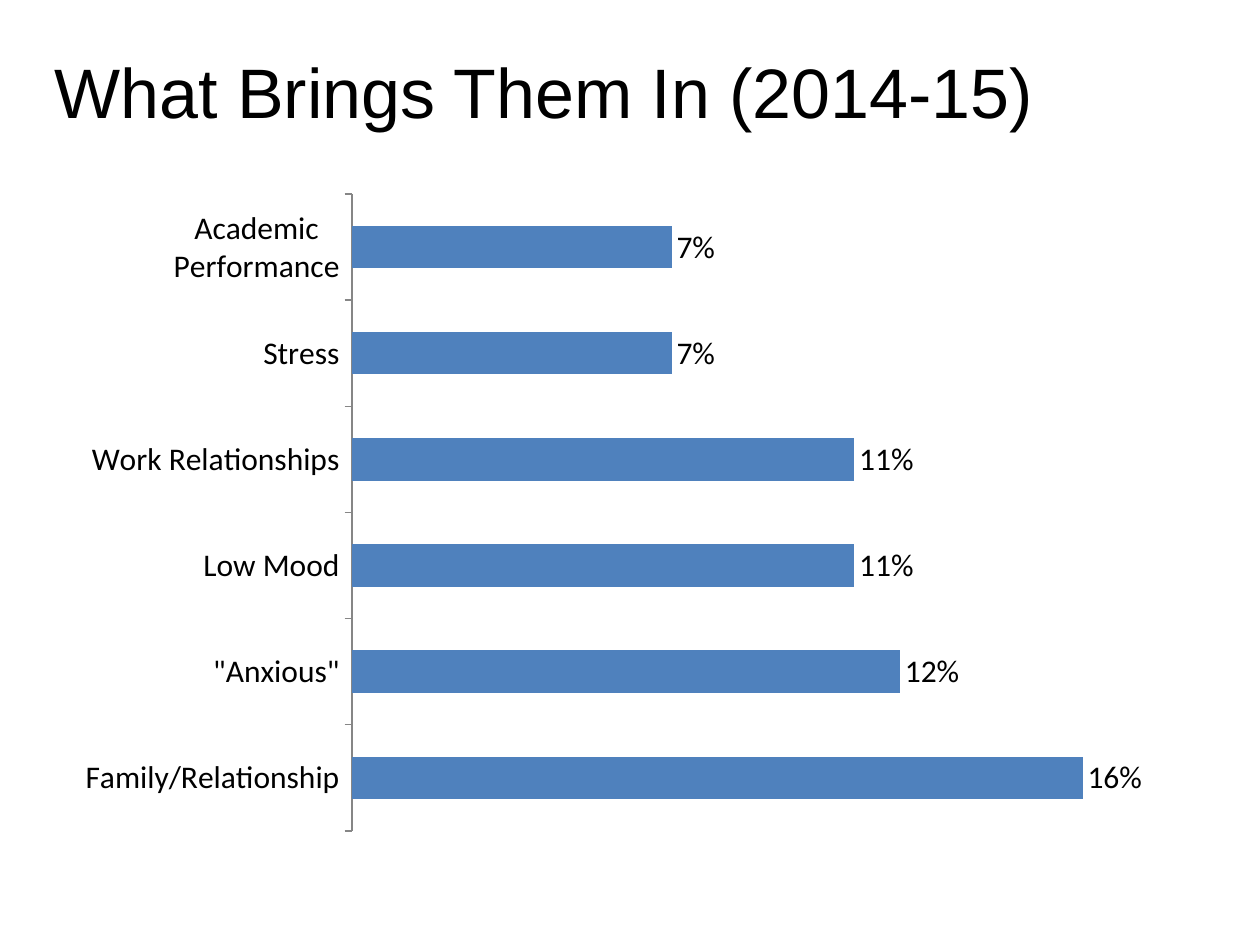
from lxml import etree
from pptx import Presentation
from pptx.chart.data import CategoryChartData
from pptx.dml.color import RGBColor
from pptx.enum.chart import XL_CHART_TYPE, XL_LABEL_POSITION, XL_TICK_LABEL_POSITION, XL_TICK_MARK
from pptx.enum.text import MSO_ANCHOR, PP_ALIGN
from pptx.oxml.ns import qn
from pptx.util import Pt

PX = 914400 // 126
COLORS = {"text": "000000", "bar": "4F81BD", "axis": "868686"}
TITLE = "What Brings Them In (2014-15)"
REASONS = [
    ("Family/Relationship", 0.16),
    ('"Anxious"', 0.12),
    ("Low Mood", 0.11),
    ("Work Relationships", 0.11),
    ("Stress", 0.07),
    ("Academic Performance", 0.07),
]
TITLE_BOX = (42, 35, 1218, 152)
CHART_BOX = (63, 181, 1134, 664)
PLOT_BOX = (352, 194, 822, 637)


def color(name):
    return RGBColor.from_string(COLORS[name])


def emu(box):
    return [length * PX for length in box]


def style(font, family, size):
    font.name = family
    font.size = Pt(size)
    font.color.rgb = color("text")


def place_plot(chart):
    plot_area = chart.plots[0]._element.getparent()
    for old in plot_area.findall(qn("c:layout")):
        plot_area.remove(old)
    layout = etree.Element(qn("c:layout"))
    plot_area.insert(0, layout)
    manual = etree.SubElement(layout, qn("c:manualLayout"))
    left, top, width, height = CHART_BOX
    x, y, w, h = PLOT_BOX
    settings = [
        ("layoutTarget", "inner"), ("xMode", "edge"), ("yMode", "edge"),
        ("x", (x - left) / width), ("y", (y - top) / height),
        ("w", w / width), ("h", h / height),
    ]
    for tag, value in settings:
        etree.SubElement(manual, qn(f"c:{tag}"), val=str(value))


def add_title(slide):
    title = slide.shapes.title
    title.left, title.top, title.width, title.height = emu(TITLE_BOX)
    frame = title.text_frame
    frame.text = TITLE
    frame.vertical_anchor = MSO_ANCHOR.TOP
    frame.margin_top = 13 * PX
    heading = frame.paragraphs[0]
    heading.alignment = PP_ALIGN.LEFT
    style(heading.runs[0].font, "Arial", 40)


def add_reasons(slide):
    data = CategoryChartData(number_format="0%")
    data.categories = [reason for reason, _ in REASONS]
    data.add_series("Series 1", [share for _, share in REASONS])
    chart = slide.shapes.add_chart(XL_CHART_TYPE.BAR_CLUSTERED, *emu(CHART_BOX), data).chart
    style(chart.font, "Calibri", 10)
    chart.has_legend = False
    chart.has_title = False

    reasons = chart.category_axis
    reasons.major_tick_mark = XL_TICK_MARK.OUTSIDE
    reasons.tick_label_position = XL_TICK_LABEL_POSITION.LOW
    reasons.format.line.color.rgb = color("axis")
    style(reasons.tick_labels.font, "Calibri", 18)

    shares = chart.value_axis
    shares.visible = False
    shares.has_major_gridlines = False
    shares.minimum_scale, shares.maximum_scale = 0, 0.18
    shares.tick_labels.number_format = "0%"
    shares.tick_labels.number_format_is_linked = False

    bars = chart.plots[0]
    bars.gap_width = 150
    bars.vary_by_categories = False
    fill = bars.series[0].format.fill
    fill.solid()
    fill.fore_color.rgb = color("bar")
    bars.has_data_labels = True
    labels = bars.data_labels
    labels.show_value = True
    labels.number_format = "0%"
    labels.number_format_is_linked = False
    labels.position = XL_LABEL_POSITION.OUTSIDE_END
    style(labels.font, "Calibri", 18)
    place_plot(chart)


def main():
    deck = Presentation()
    deck.slide_width, deck.slide_height = 1260 * PX, 945 * PX
    slide = deck.slides.add_slide(deck.slide_layouts[5])
    add_title(slide)
    add_reasons(slide)
    deck.save("out.pptx")


if __name__ == "__main__":
    main()
